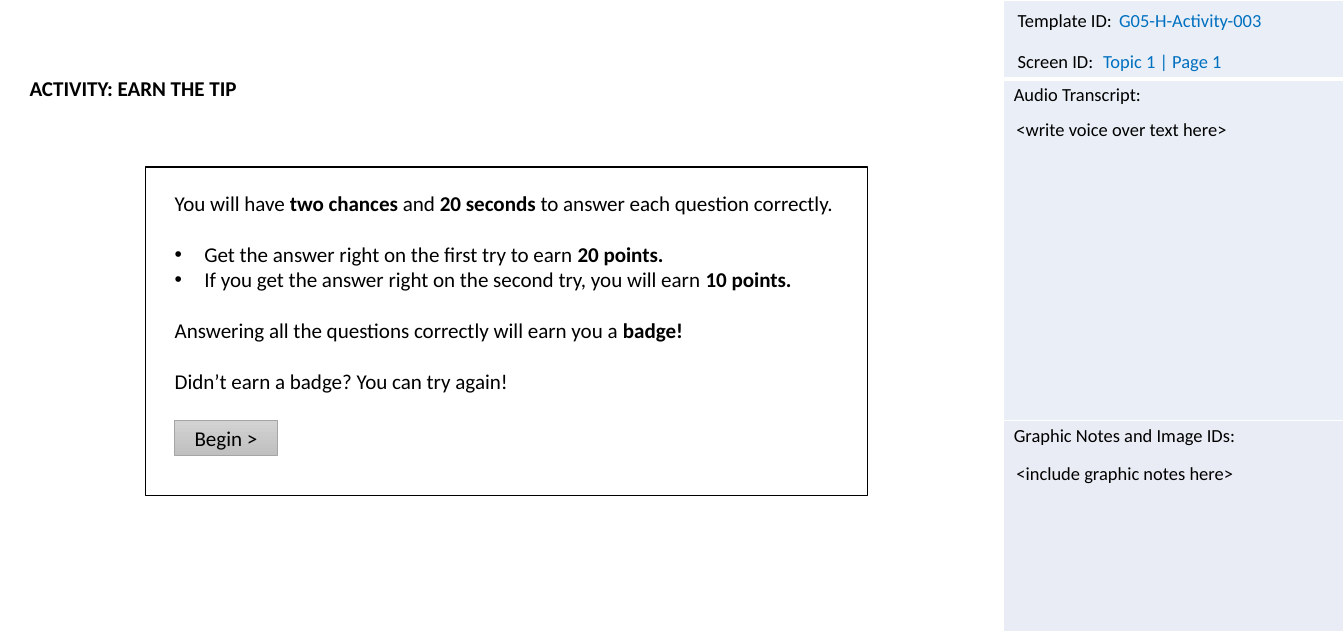
import pptx
import pptx.util
import pptx.dml.color
import pptx.enum.shapes
import pptx.enum.text
import pptx.oxml.ns
import lxml.etree

Pt = pptx.util.Pt
RECT = pptx.enum.shapes.MSO_SHAPE.RECTANGLE
ALIGN = pptx.enum.text.PP_ALIGN
ANCHOR = pptx.enum.text.MSO_ANCHOR

COLORS = {
    "ink": "000000", "blue": "0070C0", "white": "FFFFFF",
    "panel": "EAEFF7", "notes": "E9EBF5",
    "light": "D2D2D2", "dark": "C0C0C0", "edge": "A5A5A5",
}
WIDTH, HEIGHT = 1020.24, 481.68
SIDE = 762
GAP = 19.5


def color(name):
    return pptx.dml.color.RGBColor.from_string(COLORS[name])


def node(parent, tag, **attrs):
    return lxml.etree.SubElement(parent, pptx.oxml.ns.qn(tag), attrs)


def write(frame, text, size=14, ink="ink", bold=False, pad=(7.2, 3.6),
          align=ALIGN.LEFT, anchor=ANCHOR.TOP, before=0, bullet=False, more=False):
    frame.word_wrap = True
    frame.margin_left = frame.margin_right = Pt(pad[0])
    frame.margin_top = frame.margin_bottom = Pt(pad[1])
    frame.vertical_anchor = anchor
    para = frame.add_paragraph() if more else frame.paragraphs[0]
    para.alignment = align
    para.space_before = Pt(before)
    for index, part in enumerate(text.split("**")):
        if part:
            run = para.add_run()
            run.text = part
            run.font.name = "Calibri"
            run.font.size = Pt(size)
            run.font.bold = bold or index % 2 == 1
            run.font.color.rgb = color(ink)
    if bullet:
        props = para._p.get_or_add_pPr()
        props.set("marL", str(Pt(22.5)))
        props.set("indent", str(-Pt(22.5)))
        node(props, "a:buFont", typeface="Arial")
        node(props, "a:buChar", char="•")


def label(slide, text, left, top, width, height=24.24, **style):
    box = slide.shapes.add_textbox(Pt(left), Pt(top), Pt(width), Pt(height))
    write(box.text_frame, text, **style)


def border(cell, base):
    props = cell._tc.get_or_add_tcPr()
    for index, side in enumerate(("L", "R", "T", "B")):
        line = lxml.etree.Element(pptx.oxml.ns.qn("a:ln" + side), w=str(Pt(base if side == "B" else 1)))
        fill = node(line, "a:solidFill")
        node(fill, "a:srgbClr", val=COLORS["white"])
        props.insert(index, line)


def sidebar(slide, left, top, width):
    rows = [
        (59.9, "", "panel", 3),
        (258.8, "Audio Transcript:", "panel", 1),
        (160.6, "Graphic Notes and Image IDs:", "notes", 1),
    ]
    total = sum(row[0] for row in rows)
    table = slide.shapes.add_table(3, 1, Pt(left), Pt(top), Pt(width), Pt(total)).table
    table.first_row = table.horz_banding = False
    table.columns[0].width = Pt(width)
    for index, (height, title, shade, base) in enumerate(rows):
        table.rows[index].height = Pt(height)
        cell = table.cell(index, 0)
        cell.margin_left = cell.margin_right = Pt(7.6)
        cell.margin_top = cell.margin_bottom = Pt(3.8)
        cell.fill.solid()
        cell.fill.fore_color.rgb = color(shade)
        border(cell, base)
        if title:
            run = cell.text_frame.paragraphs[0].add_run()
            run.text = title
            run.font.name = "Calibri"
            run.font.size = Pt(14)
            run.font.bold = False
            run.font.color.rgb = color("ink")
    label(slide, "Template ID:", left + 3.4, top + 3, 90)
    label(slide, "Screen ID:", left + 3.4, top + 34.6, 80)
    label(slide, "G05-H-Activity-003", left + 80.4, top + 3.6, 177.8, ink="blue")
    label(slide, "Topic 1 | Page 1", left + 68.3, top + 34.2, 111, ink="blue")
    label(slide, "<write voice over text here>", left + 2.5, top + 85.7, 255)
    label(slide, "<include graphic notes here>", left + 2.5, top + 347, 255)


def panel(slide, left, top, width, height):
    frame = slide.shapes.add_shape(RECT, Pt(left), Pt(top), Pt(width), Pt(height))
    frame.shadow.inherit = False
    frame.fill.background()
    frame.line.color.rgb = color("ink")
    frame.line.width = Pt(1)

    body = slide.shapes.add_textbox(Pt(left + 22), Pt(top + 18), Pt(width - 23), Pt(160.6))
    lines = [
        ("You will have **two chances **and **20 seconds **to answer each question correctly.", 0, False),
        ("Get the answer right on the first try to earn **20 points.**", GAP, True),
        ("If you get the answer right on the second try, you will earn **10 points.**", 0, True),
        ("Answering all the questions correctly will earn you a **badge!**", GAP, False),
        ("Didn’t earn a badge? You can try again!", GAP, False),
    ]
    for index, (text, before, bullet) in enumerate(lines):
        write(body.text_frame, text, size=16, pad=(0, 0), before=before,
              bullet=bullet, more=index > 0)

    button = slide.shapes.add_shape(RECT, Pt(left + 22), Pt(top + 192.6), Pt(77.8), Pt(26.2))
    button.shadow.inherit = False
    button.fill.gradient()
    button.fill.gradient_angle = 270
    for stop, shade in zip(button.fill.gradient_stops, ("light", "dark")):
        stop.color.rgb = color(shade)
    button.line.color.rgb = color("edge")
    button.line.width = Pt(0.5)
    write(button.text_frame, "Begin >", size=16, pad=(0, 3.6),
          align=ALIGN.CENTER, anchor=ANCHOR.MIDDLE)


def main():
    deck = pptx.Presentation()
    deck.slide_width, deck.slide_height = Pt(WIDTH), Pt(HEIGHT)
    slide = deck.slides.add_slide(deck.slide_layouts[6])
    sidebar(slide, SIDE, 0, WIDTH - SIDE)
    label(slide, "ACTIVITY: EARN THE TIP", 22.4, 57, 461.5, 27.4,
          size=16, bold=True, pad=(0, 0))
    panel(slide, 110.6, 126.6, 548, 249.3)
    deck.save("out.pptx")


if __name__ == "__main__":
    main()
